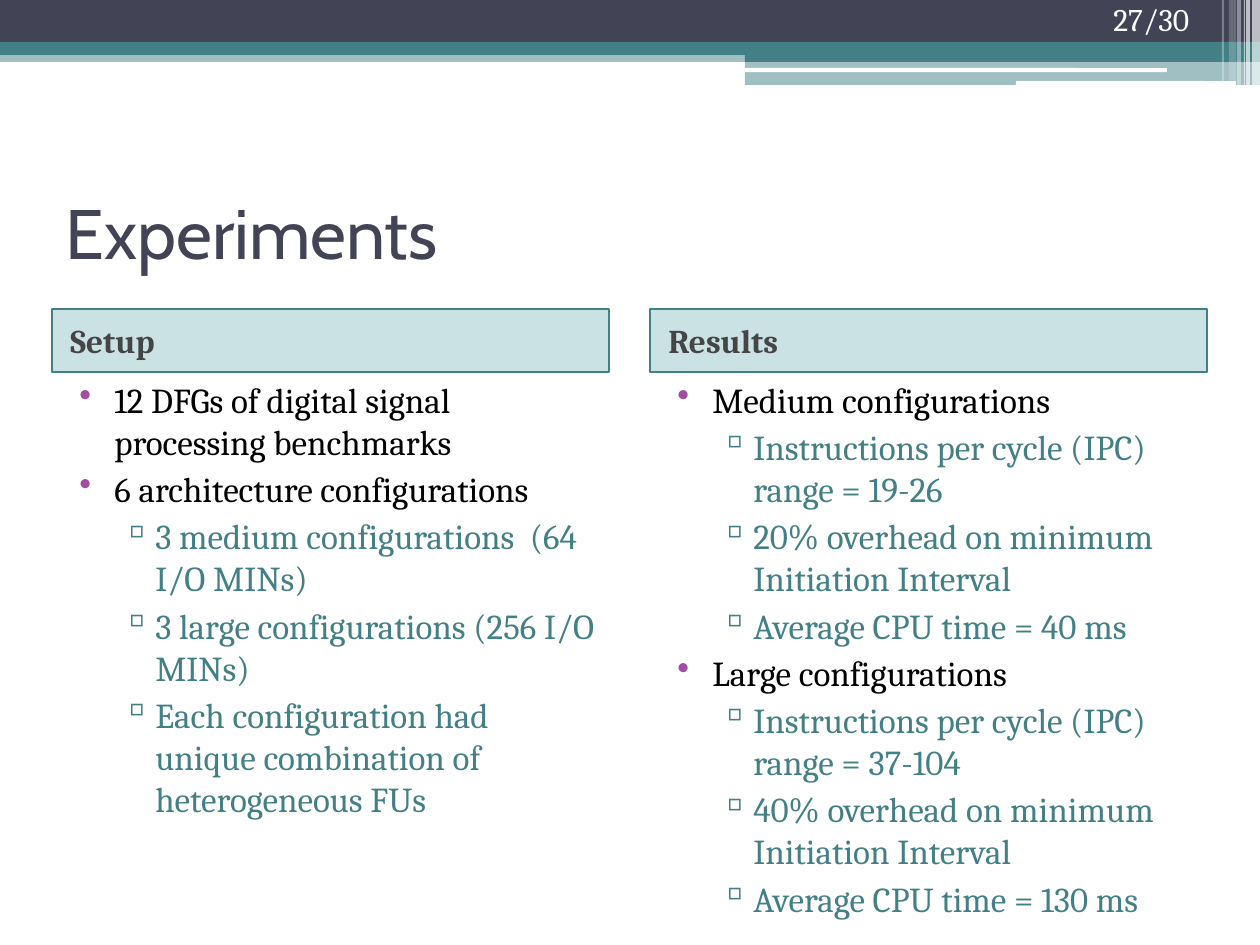
from lxml import etree
from pptx import Presentation
from pptx.dml.color import RGBColor
from pptx.enum.shapes import MSO_SHAPE
from pptx.enum.text import MSO_ANCHOR, PP_ALIGN
from pptx.oxml.ns import qn
from pptx.util import Emu, Pt

RECT, ROUND = MSO_SHAPE.RECTANGLE, MSO_SHAPE.ROUNDED_RECTANGLE
TOP, MIDDLE = MSO_ANCHOR.TOP, MSO_ANCHOR.MIDDLE
LEFT = PP_ALIGN.LEFT
PX = 914400 / 126

THEME = {
    "dark": "424456", "teal": "438086", "white": "FFFFFF", "black": "000000",
    "panel": "328E97", "heading": "454545", "purple": "A04DA3",
    "title_font": "Cabin", "body_font": "Cambria",
    "title_size": 40, "body_size": 20, "heading_size": 19, "page_size": 18,
}


def add_box(s, box, color=None, alpha=100, kind=RECT):
    """Add a borderless rectangle, or a text box when no colour is given."""
    x, y, w, h = [Emu(round(v * PX)) for v in box]
    if color is None:
        return s.shapes.add_textbox(x, y, w, h)
    sp = s.shapes.add_shape(kind, x, y, w, h)
    sp.shadow.inherit = False
    sp.line.fill.background()
    sp.fill.solid()
    sp.fill.fore_color.rgb = RGBColor.from_string(THEME[color])
    if alpha < 100:
        clr = sp.fill._xPr.find(".//" + qn("a:srgbClr"))
        etree.SubElement(clr, qn("a:alpha"), val=str(alpha * 1000))
    return sp


def add_text(sp, text, size="body_size", color="black", font="body_font", bold=False,
             anchor=TOP, before=0, margin=0, hanging=0, level=0, bullet=None,
             bullet_color=None):
    """Write one paragraph, after any that the shape already holds."""
    tf = sp.text_frame
    tf.word_wrap = True
    tf.vertical_anchor = anchor
    p = tf.add_paragraph() if tf.text else tf.paragraphs[0]
    p.alignment = LEFT
    p.level = level
    p.space_before = Pt(before)
    r = p.add_run()
    r.text = text
    r.font.name = THEME[font]
    r.font.size = Pt(THEME[size])
    r.font.bold = bold
    r.font.color.rgb = RGBColor.from_string(THEME[color])
    pPr = p._p.get_or_add_pPr()
    pPr.set("marL", str(round(margin * PX)))
    pPr.set("indent", str(round(-hanging * PX)))
    if bullet:
        clr = etree.SubElement(pPr, qn("a:buClr"))
        etree.SubElement(clr, qn("a:srgbClr"), val=THEME[bullet_color])
        etree.SubElement(pPr, qn("a:buChar"), char=bullet)


prs = Presentation()
prs.slide_width, prs.slide_height = Emu(round(1260 * PX)), Emu(round(945 * PX))
s = prs.slides.add_slide(prs.slide_layouts[6])

# Header bands
for box, color, alpha in [
    ((0, 50, 1260, 12), "teal", 50),
    ((0, 0, 1260, 42), "dark", 100),
    ((0, 42, 1260, 13), "teal", 100),
    ((745, 49, 515, 13), "teal", 100),
    ((745, 61, 515, 24), "teal", 50),
]:
    add_box(s, box, color, alpha)

# White rules in the header
for box in [(745, 68, 422, 4), (1016, 81, 220, 5)]:
    add_box(s, box, "white", kind=ROUND)

# Vertical stripes at the right edge: left, width, height, opacity
for x, w, h, alpha in [(1252, 8, 85, 65), (1246, 4, 85, 65), (1244, 1, 85, 60),
                       (1237, 4, 85, 40), (1229, 7, 81, 20), (1222, 2, 81, 30)]:
    add_box(s, (x, 0, w, h), "white", alpha)

# Page number and title
add_text(add_box(s, (1101, -6, 125, 50)), "27/30", size="page_size", color="white")
add_text(add_box(s, (53, 158, 1155, 147)), "Experiments", size="title_size",
         color="dark", font="title_font", anchor=MIDDLE)

# Two columns: heading panel above a bulleted list of (level, text)
LEVELS = [
    dict(color="black", margin=50, hanging=35, bullet="•", bullet_color="purple"),
    dict(color="teal", margin=91, hanging=34, bullet="▫", bullet_color="teal"),
]
COLUMNS = [
    ("Setup", [
        (0, "12 DFGs of digital signal processing benchmarks"),
        (0, "6 architecture configurations"),
        (1, "3 medium configurations  (64 I/O MINs)"),
        (1, "3 large configurations (256 I/O MINs)"),
        (1, "Each configuration had unique combination of heterogeneous FUs"),
    ]),
    ("Results", [
        (0, "Medium configurations"),
        (1, "Instructions per cycle (IPC) range = 19-26"),
        (1, "20% overhead on minimum Initiation Interval"),
        (1, "Average CPU time = 40 ms"),
        (0, "Large configurations"),
        (1, "Instructions per cycle (IPC) range = 37-104"),
        (1, "40% overhead on minimum Initiation Interval"),
        (1, "Average CPU time = 130 ms"),
    ]),
]
for i, (heading, items) in enumerate(COLUMNS):
    x = 52 + 598 * i
    panel = add_box(s, (x, 309, 557, 63), "panel", 25)
    panel.line.color.rgb = RGBColor.from_string(THEME["teal"])
    panel.line.width = Pt(1)
    add_text(panel, heading, size="heading_size", color="heading", bold=True,
             anchor=MIDDLE, before=3, margin=6)
    body = add_box(s, (x, 372, 557, 536))
    for level, text in items:
        add_text(body, text, before=3, level=level, **LEVELS[level])

prs.save("out.pptx")
